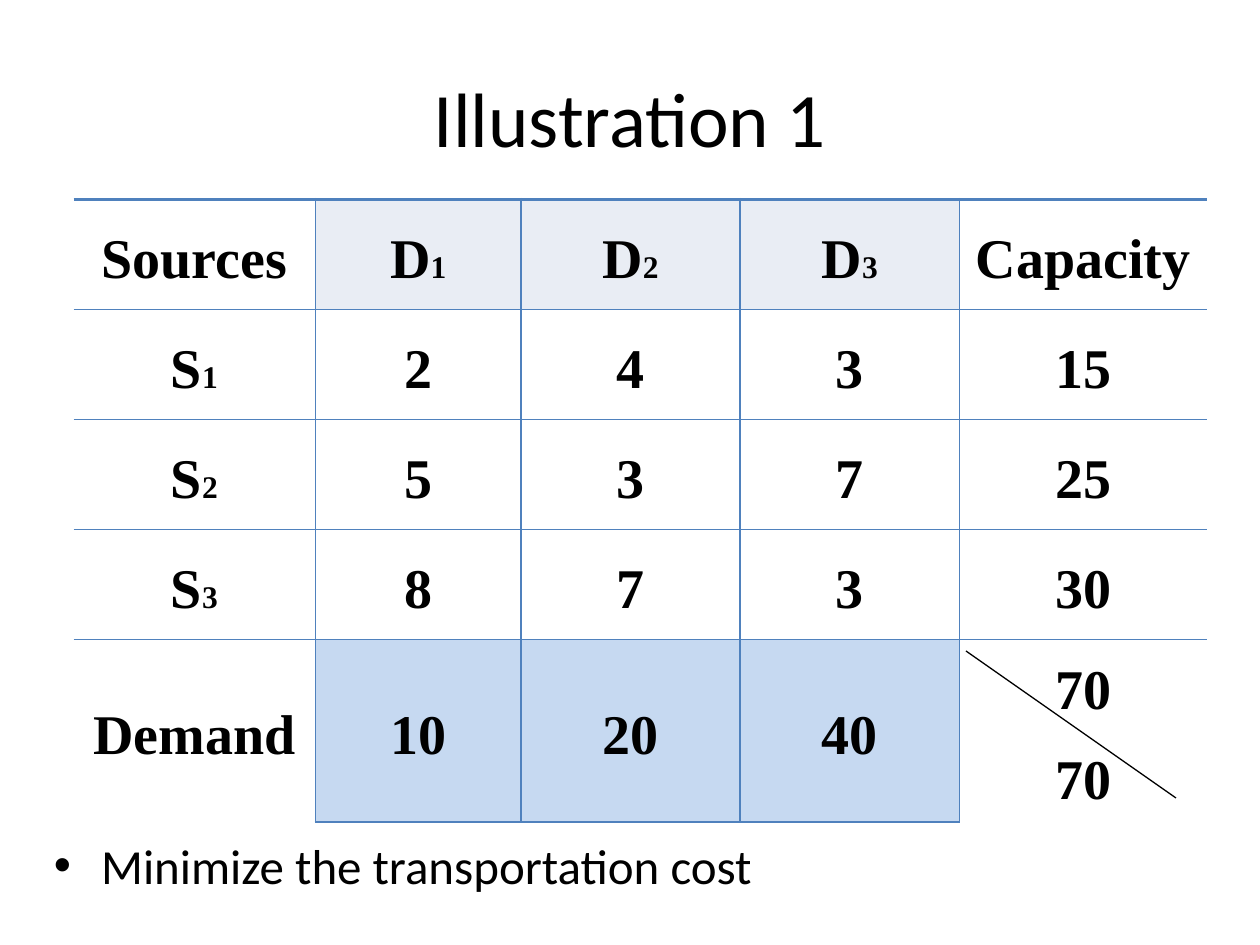
from pptx import Presentation
from pptx.dml.color import RGBColor
from pptx.enum.shapes import MSO_CONNECTOR
from pptx.enum.text import MSO_ANCHOR, PP_ALIGN
from pptx.oxml import parse_xml
from pptx.oxml.ns import nsdecls
from pptx.util import Pt
from lxml.etree import SubElement

BLACK = RGBColor(0x00, 0x00, 0x00)
WHITE = RGBColor(0xFF, 0xFF, 0xFF)
BLUE = RGBColor(0x4F, 0x81, 0xBD)
PALE_BLUE = RGBColor(0xE9, 0xED, 0xF4)
LIGHT_BLUE = RGBColor(0xC6, 0xD9, 0xF1)
DRAWING = "{http://schemas.openxmlformats.org/drawingml/2006/main}"

COLUMN_WIDTHS = [138.25, 117.5, 125.25, 125.25, 141.75]
ROW_HEIGHTS = [62.9, 62.9, 62.9, 62.9, 64]
COSTS = [
    ["Sources", "D1", "D2", "D3", "Capacity"],
    ["S1", "2", "4", "3", "15"],
    ["S2", "5", "3", "7", "25"],
    ["S3", "8", "7", "3", "30"],
    ["Demand", "10", "20", "40", "70\n70"],
]
LAST_ROW = len(ROW_HEIGHTS) - 1
LAST_COLUMN = len(COLUMN_WIDTHS) - 1


def format_span(span, size, font, bold=False):
    """Give a run its font, size, weight and the black text colour."""
    span.font.name = font
    span.font.size = Pt(size)
    span.font.bold = bold
    span.font.color.rgb = BLACK


def add_title(page, text):
    """Place and format the title placeholder."""
    title = page.shapes.title
    title.left, title.top, title.width, title.height = Pt(36), Pt(21.6), Pt(648), Pt(90)
    title.text_frame.text = text
    title.text_frame.vertical_anchor = MSO_ANCHOR.MIDDLE
    para = title.text_frame.paragraphs[0]
    para.alignment = PP_ALIGN.CENTER
    format_span(para.runs[0], 44, "Calibri")


def add_bullet(page, text):
    """Add the bulleted line below the table."""
    box = page.shapes.add_textbox(Pt(23.75), Pt(473.75), Pt(669.6), Pt(83.5))
    box.text_frame.word_wrap = True
    box.text_frame.text = text
    para = box.text_frame.paragraphs[0]
    para.space_before = Pt(5.6)
    format_span(para.runs[0], 28, "Calibri")
    properties = para._p.get_or_add_pPr()
    properties.set("marL", str(Pt(27)))
    properties.set("indent", str(-Pt(27)))
    SubElement(properties, DRAWING + "buFont", typeface="Arial")
    SubElement(properties, DRAWING + "buChar", char="•")


def write_cell(cell, text):
    """Write centred bold text, with the index of a source or destination small."""
    cell.vertical_anchor = MSO_ANCHOR.MIDDLE
    cell.margin_left = cell.margin_right = Pt(6.5)
    cell.margin_top = cell.margin_bottom = Pt(3)
    cell.text_frame.text = text
    for para in cell.text_frame.paragraphs:
        para.alignment = PP_ALIGN.CENTER
        para.line_spacing = 1.15
        para.space_after = Pt(10)
        span = para.runs[0]
        if text[0] in "SD" and text[-1].isdigit():
            span.text = text[0]
            index = para.add_run()
            index.text = text[1:]
            format_span(index, 18, "Times New Roman", bold=True)
        format_span(span, 32, "Times New Roman", bold=True)


def fill_cell(cell, row, column):
    """Shade the destination and demand cells and the last source row."""
    inner = 0 < column < LAST_COLUMN
    if row == LAST_ROW - 1:
        colour = WHITE
    elif inner:
        colour = {0: PALE_BLUE, LAST_ROW: LIGHT_BLUE}.get(row)
    else:
        colour = None
    if colour is None:
        cell.fill.background()
    else:
        cell.fill.solid()
        cell.fill.fore_color.rgb = colour


def set_borders(cell, row, column):
    """Draw the grid, open at the outer sides and below the corner cells."""
    corner = row == LAST_ROW and column in (0, LAST_COLUMN)
    widths = {
        "L": 0 if column == 0 else 1,
        "R": 0 if column == LAST_COLUMN else 1,
        "T": 2.25 if row == 0 else 1,
        "B": 0 if corner else 1,
    }
    properties = cell._tc.get_or_add_tcPr()
    for position, (side, width) in enumerate(widths.items()):
        paint = f'<a:solidFill><a:srgbClr val="{BLUE}"/></a:solidFill>' if width else "<a:noFill/>"
        border = f'<a:ln{side} {nsdecls("a")} w="{Pt(width)}">{paint}</a:ln{side}>'
        properties.insert(position, parse_xml(border))


def add_cost_table(page):
    """Add the table of transport costs, capacities and demands."""
    frame = page.shapes.add_table(
        len(ROW_HEIGHTS), len(COLUMN_WIDTHS), Pt(42), Pt(114), Pt(648), Pt(356.4)
    )
    table = frame.table
    table.first_row = table.horz_banding = False
    for column, width in zip(table.columns, COLUMN_WIDTHS):
        column.width = Pt(width)
    for row, height in zip(table.rows, ROW_HEIGHTS):
        row.height = Pt(height)
    for row, texts in enumerate(COSTS):
        for column, text in enumerate(texts):
            cell = table.cell(row, column)
            write_cell(cell, text)
            fill_cell(cell, row, column)
            set_borders(cell, row, column)
    frame.height = Pt(356.4)


def add_diagonal(page):
    """Add the line that parts total capacity from total demand."""
    line = page.shapes.add_connector(
        MSO_CONNECTOR.STRAIGHT, Pt(552), Pt(372), Pt(672), Pt(456)
    )
    line.line.color.rgb = BLACK
    line.line.width = Pt(0.75)
    SubElement(line._element.spPr, DRAWING + "effectLst")


def main():
    """Build the slide and save the deck."""
    deck = Presentation()
    deck.slide_width, deck.slide_height = Pt(720), Pt(540)
    page = deck.slides.add_slide(deck.slide_layouts[5])
    add_title(page, "Illustration 1")
    add_bullet(page, "Minimize the transportation cost")
    add_cost_table(page)
    add_diagonal(page)
    deck.save("out.pptx")


if __name__ == "__main__":
    main()
